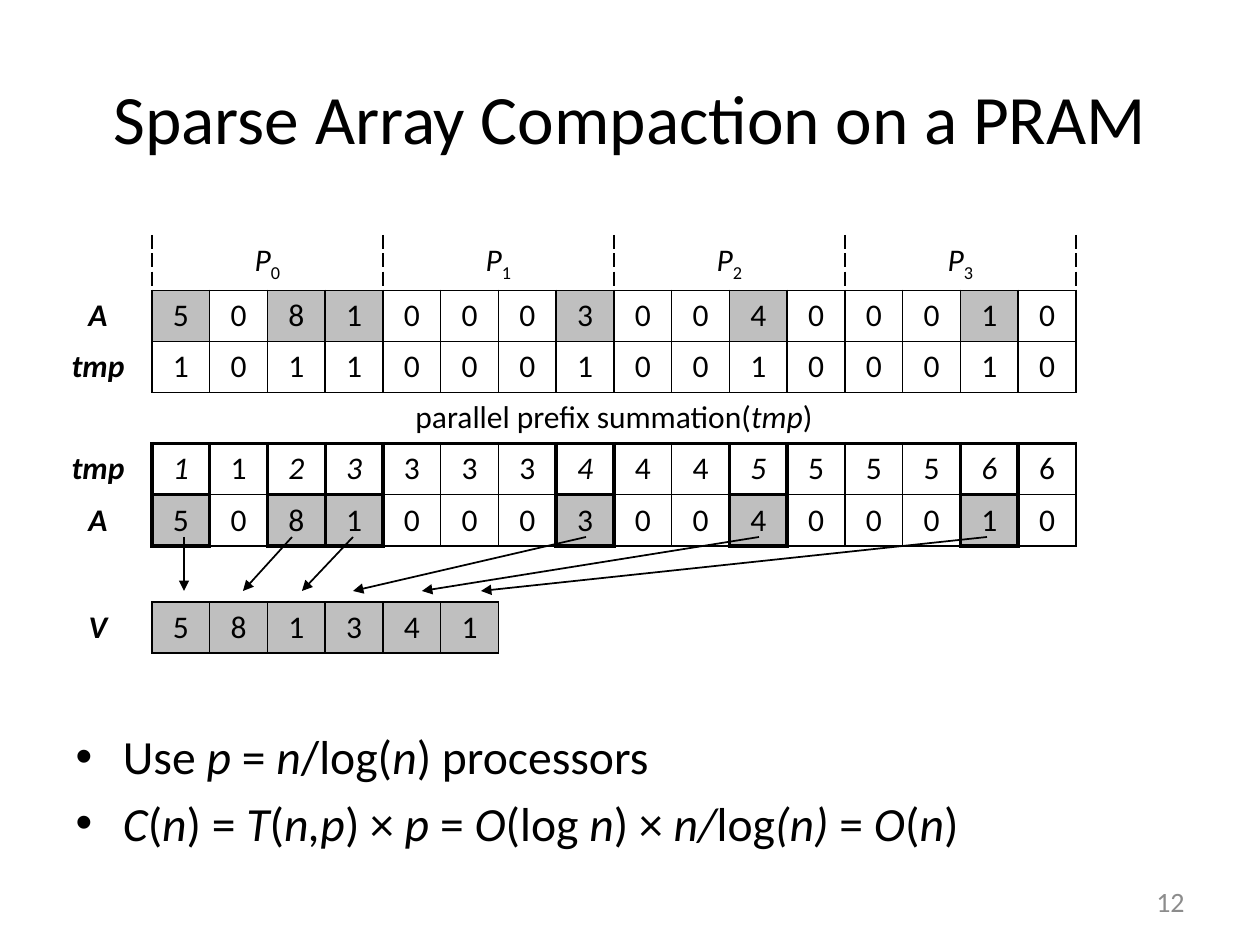
from dataclasses import dataclass
from itertools import accumulate

from lxml import etree
from pptx import Presentation
from pptx.dml.color import RGBColor
from pptx.enum.shapes import MSO_CONNECTOR
from pptx.enum.text import MSO_ANCHOR, MSO_AUTO_SIZE, PP_ALIGN
from pptx.oxml.ns import qn
from pptx.util import Emu, Pt

STRAIGHT = MSO_CONNECTOR.STRAIGHT
CENTER, LEFT, RIGHT = PP_ALIGN.CENTER, PP_ALIGN.LEFT, PP_ALIGN.RIGHT
MIDDLE, TOP = MSO_ANCHOR.MIDDLE, MSO_ANCHOR.TOP


@dataclass(frozen=True)
class Theme:
    font: str = "Calibri"
    ink: str = "000000"
    kept: str = "BFBFBF"
    muted: str = "8C8C8C"
    title: float = 39.6
    body: float = 27.2
    cell: float = 18
    number: float = 16
    thin: float = 1
    thick: float = 2.25


THEME = Theme()

# Content
TITLE = "Sparse Array Compaction on a PRAM"
# Runs alternate between upright and italic, starting upright.
BULLETS = [
    ("Use ", "p ", "= ", "n", "/log(", "n", ") processors"),
    ("", "C", "(", "n", ") = ", "T", "(", "n,p", ") × ", "p", " = ", "O", "(log ", "n",
     ") × ", "n/", "log", "(n)", " = ", "O", "(", "n", ")"),
]
STEP = ("parallel prefix summation(", "tmp", ")")
SLIDE_NUMBER = "12"
ARRAY = [5, 0, 8, 1, 0, 0, 0, 3, 0, 0, 4, 0, 0, 0, 1, 0]
PROCESSORS = 4
FLAGS = [int(value != 0) for value in ARRAY]
COMPACTED = [value for value in ARRAY if value]
# Table row: (label, values)
DATA_ROWS = {
    1: ("A", ARRAY),
    2: ("tmp", FLAGS),
    4: ("tmp", list(accumulate(FLAGS))),
    5: ("A", ARRAY),
    7: ("V", COMPACTED),
}
HEADING_ROW, STEP_ROW, PREFIX_ROW, COPY_ROW, RESULT_ROW = 0, 3, 4, 5, 7

# Layout in px
PX = 914400 / 126
TABLE_LEFT, TABLE_TOP, LABEL_WIDTH, GRID_WIDTH = 44, 235, 108, 924
ROW_HEIGHTS = [55, 51, 51, 51, 51, 51, 56, 51]
ARROW_TOP, ARROW_BOTTOM = 537, 591
ARROWS = [(184, 184), (292, 243), (353, 302), (586, 353), (759, 422), (987, 481)]
TITLE_BOX = (63, 38, 1134, 158)
BODY_BOX = (63, 721, 1134, 123)
NUMBER_BOX = (903, 876, 294, 50)


def px(length):
    return Emu(round(length * PX))


def write(paragraph, text, size=THEME.cell, color=THEME.ink, align=CENTER,
          bold=False, italic=False, baseline=None):
    run = paragraph.add_run()
    run.text = text
    font = run.font
    font.name, font.size, font.bold, font.italic = THEME.font, Pt(size), bold, italic
    font.color.rgb = RGBColor.from_string(color)
    paragraph.alignment = align
    if baseline is not None:
        run._r.get_or_add_rPr().set("baseline", str(baseline))


def write_alternating(paragraph, parts, **style):
    for index, part in enumerate(parts):
        if part:
            write(paragraph, part, italic=index % 2 == 1, **style)


def place(shape, box, anchor):
    shape.left, shape.top, shape.width, shape.height = map(px, box)
    frame = shape.text_frame
    frame.word_wrap, frame.auto_size, frame.vertical_anchor = True, MSO_AUTO_SIZE.NONE, anchor
    return frame


def is_kept(row, column):
    if row == RESULT_ROW:
        return True
    return ARRAY[column - 1] != 0


def box_weight(row, column):
    """Line weight of the box around a data cell, or 0 where there is no box."""
    if row not in DATA_ROWS or not 1 <= column <= len(DATA_ROWS[row][1]):
        return 0
    if row in (PREFIX_ROW, COPY_ROW) and is_kept(row, column):
        return THEME.thick
    return THEME.thin


def edge(cell, side, weight, dashed=False):
    line = etree.SubElement(cell._tc.get_or_add_tcPr(), qn(f"a:ln{side}"), w=str(Pt(weight)))
    if not weight:
        etree.SubElement(line, qn("a:noFill"))
        return
    fill = etree.SubElement(line, qn("a:solidFill"))
    etree.SubElement(fill, qn("a:srgbClr"), val=THEME.ink)
    etree.SubElement(line, qn("a:prstDash"), val="sysDash" if dashed else "solid")


def draw_edges(cell, row, column):
    """Give each side the heavier of the weights of the two cells it divides."""
    own = box_weight(row, column)
    neighbours = {"L": (row, column - 1), "R": (row, column + cell.span_width if cell.is_merge_origin
                                                else column + 1),
                  "T": (row - 1, column), "B": (row + 1, column)}
    for side, neighbour in neighbours.items():
        weight = max(own, box_weight(*neighbour))
        dashed = row == HEADING_ROW and (side == "R" or side == "L" and column > 0)
        if dashed:
            weight = THEME.thin
        if column and (row, side) in ((STEP_ROW, "B"), (PREFIX_ROW, "T")):
            weight = THEME.thick
        edge(cell, side, weight, dashed)


def add_array_table(slide):
    count = len(ARRAY)
    frame = slide.shapes.add_table(len(ROW_HEIGHTS), count + 1, px(TABLE_LEFT), px(TABLE_TOP),
                                   px(LABEL_WIDTH + GRID_WIDTH), px(sum(ROW_HEIGHTS)))
    table = frame.table
    table.first_row = table.horz_banding = False
    for index, column in enumerate(table.columns):
        column.width = px(GRID_WIDTH / count if index else LABEL_WIDTH)
    for row, height in zip(table.rows, ROW_HEIGHTS):
        row.height = px(height)

    group = count // PROCESSORS
    for processor in range(PROCESSORS):
        first = 1 + processor * group
        heading = table.cell(HEADING_ROW, first)
        heading.merge(table.cell(HEADING_ROW, first + group - 1))
        heading.vertical_anchor = TOP
        paragraph = heading.text_frame.paragraphs[0]
        write(paragraph, "P", italic=True)
        write(paragraph, str(processor), baseline=-25000)
    step = table.cell(STEP_ROW, 1)
    step.merge(table.cell(STEP_ROW, count))
    write_alternating(step.text_frame.paragraphs[0], STEP)

    for row, (label, values) in DATA_ROWS.items():
        write(table.cell(row, 0).text_frame.paragraphs[0], label, bold=True, italic=True)
        for column, value in enumerate(values, start=1):
            write(table.cell(row, column).text_frame.paragraphs[0], str(value),
                  italic=row == PREFIX_ROW and is_kept(row, column))

    for row in range(len(ROW_HEIGHTS)):
        for column in range(count + 1):
            cell = table.cell(row, column)
            if cell.is_spanned:
                continue
            draw_edges(cell, row, column)
            shaded = row in (1, COPY_ROW, RESULT_ROW) and box_weight(row, column)
            if shaded and is_kept(row, column):
                cell.fill.solid()
                cell.fill.fore_color.rgb = RGBColor.from_string(THEME.kept)
            else:
                cell.fill.background()


def add_arrow(slide, start, end):
    arrow = slide.shapes.add_connector(STRAIGHT, px(start), px(ARROW_TOP), px(end), px(ARROW_BOTTOM))
    arrow.line.color.rgb = RGBColor.from_string(THEME.ink)
    arrow.line.width = Pt(THEME.thin)
    etree.SubElement(arrow.line._get_or_add_ln(), qn("a:tailEnd"), type="triangle")
    etree.SubElement(arrow._element.spPr, qn("a:effectLst"))


def main():
    presentation = Presentation()
    presentation.slide_width, presentation.slide_height = px(1260), px(945)
    slide = presentation.slides.add_slide(presentation.slide_layouts[1])
    title = place(slide.shapes.title, TITLE_BOX, MIDDLE)
    write(title.paragraphs[0], TITLE, size=THEME.title)
    body = place(slide.placeholders[1], BODY_BOX, TOP)
    for index, parts in enumerate(BULLETS):
        paragraph = body.add_paragraph() if index else body.paragraphs[0]
        write_alternating(paragraph, parts, size=THEME.body, align=LEFT)
    add_array_table(slide)
    for start, end in ARROWS:
        add_arrow(slide, start, end)
    number = place(slide.shapes.add_textbox(0, 0, 0, 0), NUMBER_BOX, MIDDLE)
    write(number.paragraphs[0], SLIDE_NUMBER, size=THEME.number, color=THEME.muted, align=RIGHT)
    presentation.save("out.pptx")


if __name__ == "__main__":
    main()
